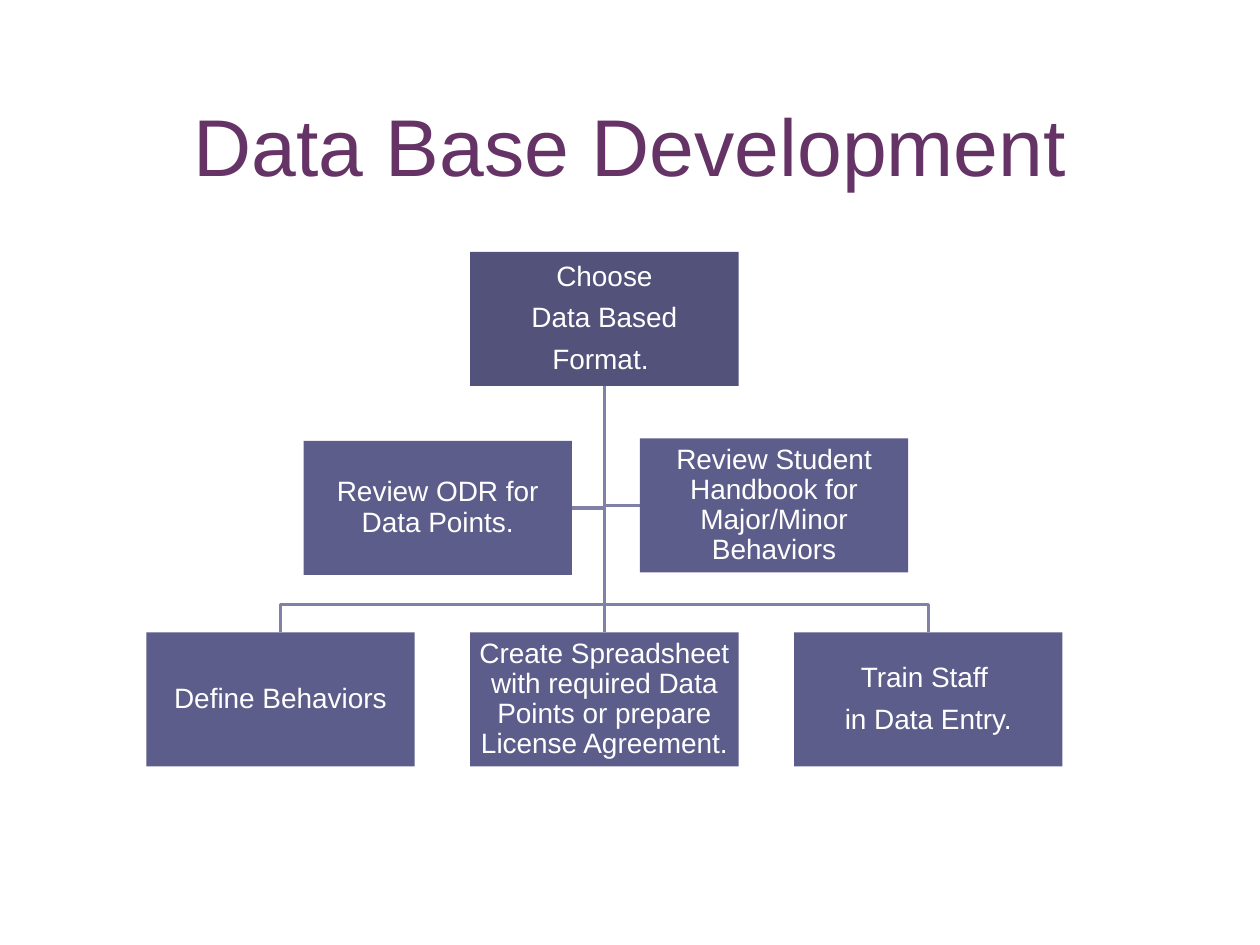
from lxml import etree
from pptx import Presentation
from pptx.dml.color import RGBColor
from pptx.enum.shapes import MSO_CONNECTOR, MSO_SHAPE
from pptx.enum.text import MSO_ANCHOR, PP_ALIGN
from pptx.oxml.ns import qn
from pptx.util import Cm, Pt

RECTANGLE = MSO_SHAPE.RECTANGLE
STRAIGHT = MSO_CONNECTOR.STRAIGHT
CENTER = PP_ALIGN.CENTER
MIDDLE, BOTTOM = MSO_ANCHOR.MIDDLE, MSO_ANCHOR.BOTTOM

PLUM = RGBColor(0x66, 0x33, 0x66)
DARK_VIOLET = RGBColor(0x52, 0x52, 0x7B)
VIOLET = RGBColor(0x5D, 0x5D, 0x8B)
LINE_VIOLET = RGBColor(0x81, 0x81, 0xA7)
WHITE = RGBColor(0xFF, 0xFF, 0xFF)
FONT = "Arial"

# Chart grid, in centimetres
BOX_WIDTH, BOX_HEIGHT = 5.41, 2.7
COLUMNS = [2.95 + 6.53 * column for column in range(3)]
ROOT_TOP, STEP_TOP = 5.08, 12.75
ODR_LEFT, ODR_TOP = 6.12, 8.89
HANDBOOK_LEFT, HANDBOOK_TOP = 12.9, 8.84
TRUNK_X = COLUMNS[1] + BOX_WIDTH / 2
TRUNK_TOP = ROOT_TOP + BOX_HEIGHT
BRANCH_Y = 12.19


def format_text(paragraph, size, color):
    paragraph.alignment = CENTER
    for run in paragraph.runs:
        run.font.name = FONT
        run.font.size = Pt(size)
        run.font.color.rgb = color


def add_box(slide, left, top, text, fill_color):
    shape = slide.shapes.add_shape(
        RECTANGLE, Cm(left), Cm(top), Cm(BOX_WIDTH), Cm(BOX_HEIGHT))
    shape.shadow.inherit = False
    shape.fill.solid()
    shape.fill.fore_color.rgb = fill_color
    shape.line.fill.background()
    text_frame = shape.text_frame
    text_frame.word_wrap = True
    text_frame.vertical_anchor = MIDDLE
    text_frame.margin_left = text_frame.margin_right = Cm(0.03)
    text_frame.margin_top = text_frame.margin_bottom = Cm(0.03)
    text_frame.text = text
    for index, paragraph in enumerate(text_frame.paragraphs):
        paragraph.line_spacing = 0.9
        if index:
            paragraph.space_before = Pt(6.3)
        format_text(paragraph, 16, WHITE)
    return shape


presentation = Presentation()
presentation.slide_width = Cm(25.4)
presentation.slide_height = Cm(19.05)
slide = presentation.slides.add_slide(presentation.slide_layouts[5])

title = slide.shapes.title
title.left, title.top, title.width, title.height = Cm(1.52), Cm(0.3), Cm(22.35), Cm(3.71)
title.text_frame.text = "Data Base Development"
title.text_frame.vertical_anchor = BOTTOM
format_text(title.text_frame.paragraphs[0], 46, PLUM)

# Bent lines, each running down the trunk before it turns off
odr_y = ODR_TOP + BOX_HEIGHT / 2
handbook_y = HANDBOOK_TOP + BOX_HEIGHT / 2
routes = [
    [(TRUNK_X, odr_y), (ODR_LEFT + BOX_WIDTH, odr_y)],
    [(TRUNK_X, handbook_y), (HANDBOOK_LEFT, handbook_y)],
]
for left in (COLUMNS[2], COLUMNS[0]):
    step_x = left + BOX_WIDTH / 2
    routes.append([(TRUNK_X, BRANCH_Y), (step_x, BRANCH_Y), (step_x, STEP_TOP)])

for route in routes:
    builder = slide.shapes.build_freeform(Cm(TRUNK_X), Cm(TRUNK_TOP))
    builder.add_line_segments([(Cm(x), Cm(y)) for x, y in route], close=False)
    bent_line = builder.convert_to_shape()
    bent_line.shadow.inherit = False
    bent_line.fill.background()
    bent_line.line.color.rgb = LINE_VIOLET
    bent_line.line.width = Pt(2)

root = add_box(slide, COLUMNS[1], ROOT_TOP, "Choose\nData Based\nFormat. ", DARK_VIOLET)

step_texts = [
    "Define Behaviors",
    "Create Spreadsheet with required Data Points or prepare License Agreement.",
    "Train Staff \nin Data Entry.",
]
steps = [add_box(slide, left, STEP_TOP, text, VIOLET)
         for left, text in zip(COLUMNS, step_texts)]

add_box(slide, HANDBOOK_LEFT, HANDBOOK_TOP,
        "Review Student Handbook for Major/Minor Behaviors", VIOLET)
add_box(slide, ODR_LEFT, ODR_TOP, "Review ODR for Data Points.", VIOLET)

trunk = slide.shapes.add_connector(
    STRAIGHT, Cm(TRUNK_X), Cm(TRUNK_TOP), Cm(TRUNK_X), Cm(STEP_TOP))
trunk.begin_connect(root, 2)
trunk.end_connect(steps[1], 0)
trunk.line.color.rgb = LINE_VIOLET
trunk.line.width = Pt(2)
etree.SubElement(trunk._element.spPr, qn("a:effectLst"))

presentation.save("out.pptx")
